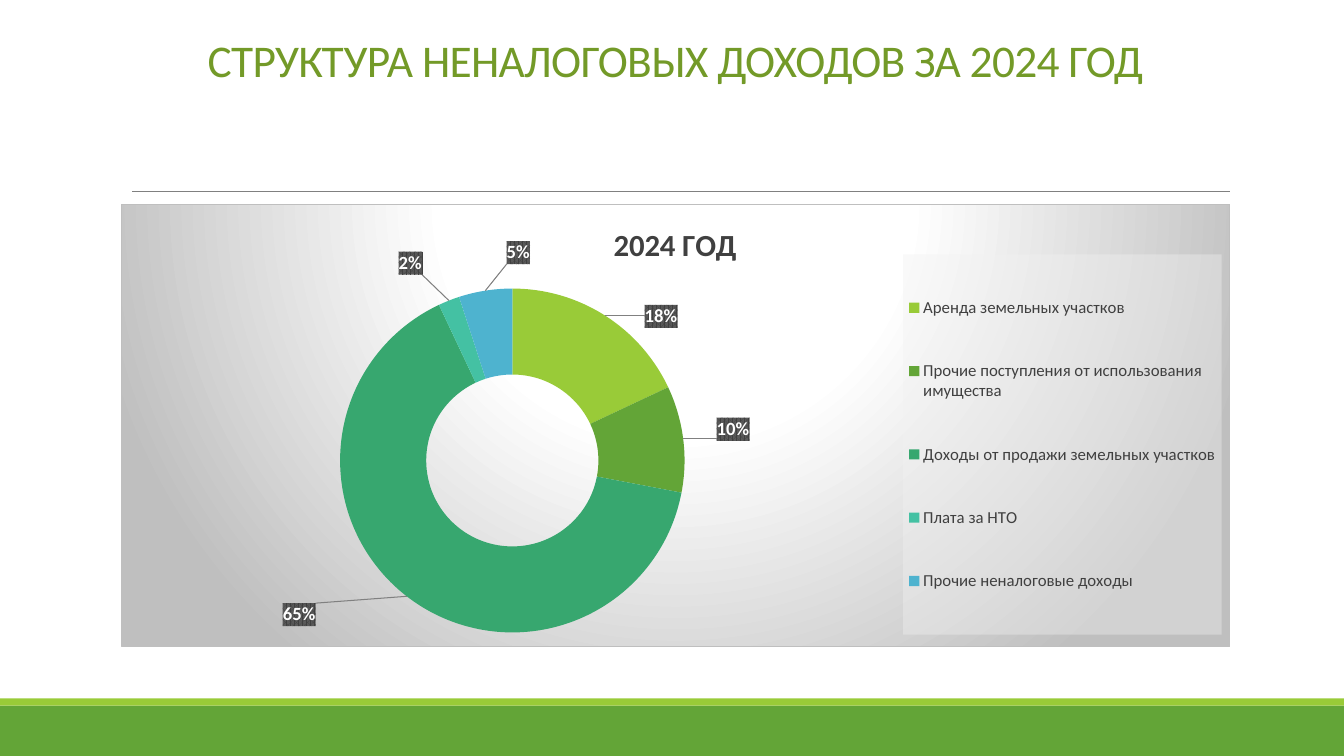
import copy
from dataclasses import dataclass

import lxml.etree
import pptx
import pptx.chart.data
import pptx.dml.color
import pptx.enum.chart
import pptx.enum.shapes
import pptx.enum.text
import pptx.oxml
import pptx.oxml.ns
import pptx.util

Inches = pptx.util.Inches
Pt = pptx.util.Pt
qn = pptx.oxml.ns.qn
NAMESPACES = pptx.oxml.ns.nsdecls("c", "a")
CHART_WIDTH = 11
CHART_HEIGHT = 4.4


@dataclass(frozen=True)
class Theme:
    font: str = "Calibri"
    heading: str = "739A28"
    text: str = "404040"
    rule: str = "808080"
    frame: str = "BFBFBF"
    white: str = "FFFFFF"
    black: str = "000000"
    label_back: str = "595959"
    legend_back: str = "F2F2F2"
    lime: str = "99CB38"
    green: str = "63A537"
    slices: tuple = ("99CB38", "63A537", "37A76F", "44C1A3", "4EB3CF")
    heading_size: float = 32.4
    chart_title_size: float = 22
    label_size: float = 13.3
    legend_size: float = 12
    chart_size: float = 10


THEME = Theme()

INCOME = (
    ("Аренда земельных участков", 18, (0.79, -0.35)),
    ("Прочие поступления от использования имущества", 10, (0.92, -0.15)),
    ("Доходы от продажи земельных участков", 65, (-1.33, 0.52)),
    ("Плата за НТО", 2, (-0.54, -0.77)),
    ("Прочие неналоговые доходы", 5, (0.26, -0.8)),
)


def rgb(value):
    return pptx.dml.color.RGBColor.from_string(value)


def style_font(font, size, color, bold=False):
    font.name = THEME.font
    font.size = Pt(size)
    font.bold = bold
    font.color.rgb = rgb(color)


def add_band(page, top, height, color):
    band = page.shapes.add_shape(
        pptx.enum.shapes.MSO_SHAPE.RECTANGLE, 0, Inches(top), Inches(13.33), Inches(height))
    band.shadow.inherit = False
    band.fill.solid()
    band.fill.fore_color.rgb = rgb(color)
    band.line.fill.background()


def add_rule(page, left, right, top):
    rule = page.shapes.add_connector(
        pptx.enum.shapes.MSO_CONNECTOR.STRAIGHT,
        Inches(left), Inches(top), Inches(right), Inches(top))
    rule.line.color.rgb = rgb(THEME.rule)
    rule.line.width = Pt(0.5)
    lxml.etree.SubElement(rule.element.spPr, qn("a:effectLst"))


def add_heading(page, text):
    box = page.shapes.add_textbox(Inches(1.2), Inches(0.31), Inches(11), Inches(0.6))
    frame = box.text_frame
    frame.word_wrap = True
    frame.vertical_anchor = pptx.enum.text.MSO_ANCHOR.BOTTOM
    para = frame.paragraphs[0]
    para.alignment = pptx.enum.text.PP_ALIGN.CENTER
    para.line_spacing = 0.85
    span = para.add_run()
    span.text = text
    span._r.get_or_add_rPr().set("spc", "-50")
    style_font(para.font, THEME.heading_size, THEME.heading)


def layout(left, top, width=None, height=None, target=None, edge=True):
    parts = [f'<c:layoutTarget val="{target}"/>'] if target else []
    if edge:
        parts += ['<c:xMode val="edge"/>', '<c:yMode val="edge"/>']
    lengths = (("x", left, CHART_WIDTH), ("y", top, CHART_HEIGHT),
               ("w", width, CHART_WIDTH), ("h", height, CHART_HEIGHT))
    parts += [f'<c:{name} val="{length / whole:.4f}"/>'
              for name, length, whole in lengths if length is not None]
    return pptx.oxml.parse_xml(
        f'<c:layout {NAMESPACES}><c:manualLayout>{"".join(parts)}</c:manualLayout></c:layout>')


def replace_layout(parent, index, new_layout):
    for old in parent.findall(qn("c:layout")):
        parent.remove(old)
    parent.insert(index, new_layout)


def shape_style(content):
    return pptx.oxml.parse_xml(f"<c:spPr {NAMESPACES}>{content}</c:spPr>")


def color_xml(value, extra=""):
    return f'<a:srgbClr val="{value}">{extra}</a:srgbClr>'


def line_xml(color):
    return f'<a:ln w="9525"><a:solidFill>{color_xml(color)}</a:solidFill></a:ln>'


def style_background(chart):
    stops = ((0, THEME.white), (39, THEME.white), (100, THEME.frame))
    stop_xml = "".join(
        f'<a:gs pos="{place * 1000}">{color_xml(color)}</a:gs>' for place, color in stops)
    chart.element.find(qn("c:chart")).addnext(shape_style(
        f'<a:gradFill><a:gsLst>{stop_xml}</a:gsLst><a:path path="circle">'
        '<a:fillToRect l="50000" t="-80000" r="50000" b="180000"/></a:path></a:gradFill>'
        + line_xml(THEME.frame)))


def style_title(chart, text):
    chart.has_title = True
    para = chart.chart_title.text_frame.paragraphs[0]
    para.add_run().text = text
    style_font(para.font, THEME.chart_title_size, THEME.text, True)
    replace_layout(chart.chart_title.element, 1, layout(4.83, 0.14))


def style_legend(chart):
    chart.has_legend = True
    legend = chart.legend
    legend.position = pptx.enum.chart.XL_LEGEND_POSITION.RIGHT
    legend.include_in_layout = False
    style_font(legend.font, THEME.legend_size, THEME.text)
    replace_layout(legend._element, 1, layout(7.76, 0.5, 3.16, 3.78))
    clear = color_xml(THEME.legend_back, '<a:alpha val="39000"/>')
    legend._element.find(qn("c:overlay")).addnext(
        shape_style(f"<a:solidFill>{clear}</a:solidFill>"))


def style_labels(series):
    labels = series.data_labels
    labels.show_percentage = True
    labels.show_value = False
    labels.number_format = "0%"
    labels.number_format_is_linked = False
    style_font(labels.font, THEME.label_size, THEME.white, True)
    root = labels._element
    root.find(qn("c:numFmt")).addnext(shape_style(
        f'<a:pattFill prst="pct75"><a:fgClr>{color_xml(THEME.text)}</a:fgClr>'
        f'<a:bgClr>{color_xml(THEME.label_back)}</a:bgClr></a:pattFill>'))
    shared = [part for part in root if part.tag != qn("c:showLeaderLines")]
    for index, (_, _, offset) in enumerate(INCOME):
        label = pptx.oxml.parse_xml(f'<c:dLbl {NAMESPACES}><c:idx val="{index}"/></c:dLbl>')
        label.append(layout(*offset, edge=False))
        label.extend([copy.deepcopy(part) for part in shared])
        root.insert(index, label)
    leader = pptx.oxml.parse_xml(f"<c:leaderLines {NAMESPACES}/>")
    leader.append(shape_style(line_xml(THEME.rule)))
    root.append(leader)


def add_income_chart(page):
    data = pptx.chart.data.CategoryChartData()
    data.categories = [name for name, _, _ in INCOME]
    data.add_series("2024 ГОД", [value for _, value, _ in INCOME])
    chart = page.shapes.add_chart(
        pptx.enum.chart.XL_CHART_TYPE.DOUGHNUT, Inches(1.2), Inches(2.02),
        Inches(CHART_WIDTH), Inches(CHART_HEIGHT), data).chart
    style_font(chart.font, THEME.chart_size, THEME.black)
    style_background(chart)
    style_title(chart, "2024 ГОД")
    style_legend(chart)
    plot_area = chart.element.find(qn("c:chart")).find(qn("c:plotArea"))
    replace_layout(plot_area, 0, layout(2.17, 0.84, 3.42, 3.42, target="inner"))
    plot = chart.plots[0]
    plot.vary_by_categories = True
    series = plot.series[0]
    for index, color in enumerate(THEME.slices):
        fill = series.points[index].format.fill
        fill.solid()
        fill.fore_color.rgb = rgb(color)
    style_labels(series)


def main():
    deck = pptx.Presentation()
    deck.slide_width = Inches(13.33)
    deck.slide_height = Inches(7.5)
    page = deck.slides.add_slide(deck.slide_layouts[6])
    add_band(page, 7, 0.5, THEME.green)
    add_band(page, 6.93, 0.07, THEME.lime)
    add_rule(page, 1.31, 12.2, 1.9)
    add_heading(page, "СТРУКТУРА НЕНАЛОГОВЫХ ДОХОДОВ ЗА 2024 ГОД")
    add_income_chart(page)
    deck.save("out.pptx")


if __name__ == "__main__":
    main()
